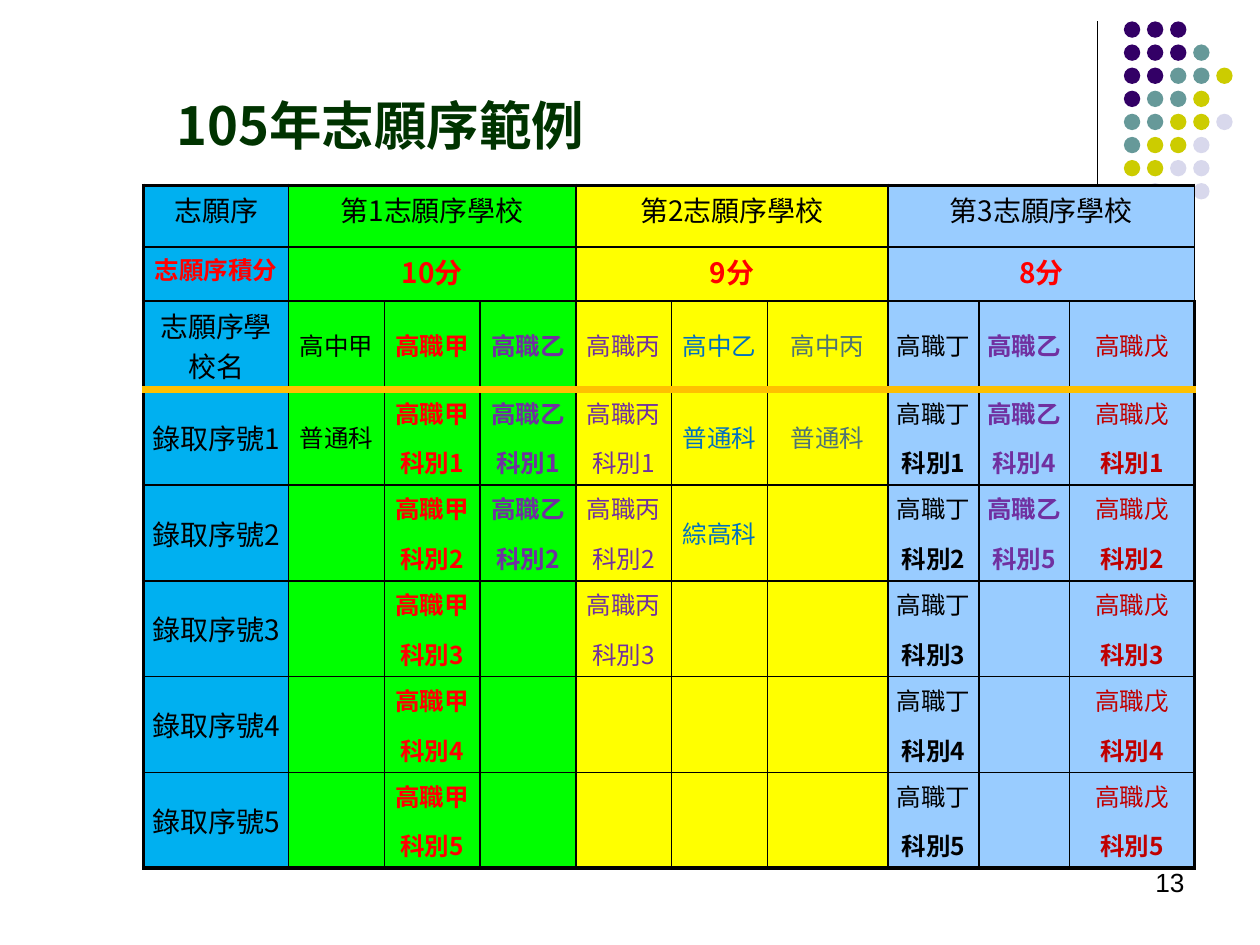
from dataclasses import dataclass

from lxml.etree import SubElement
from pptx import Presentation
from pptx.dml.color import RGBColor
from pptx.enum.shapes import MSO_CONNECTOR, MSO_SHAPE
from pptx.enum.text import MSO_ANCHOR, PP_ALIGN
from pptx.oxml.ns import qn
from pptx.util import Inches, Pt


@dataclass(frozen=True)
class Theme:
    cjk: str = "Noto Sans CJK SC"
    latin: str = "Arial"
    black: str = "000000"
    title: str = "003300"
    label_fill: str = "00B0F0"
    divider: str = "FFC000"
    red: str = "FF0000"
    dark_red: str = "C00000"
    purple: str = "7030A0"
    blue: str = "0070C0"
    grey: str = "4D7373"
    title_size: float = 30
    large: float = 16
    small: float = 14
    page_size: float = 15
    thin: float = 1
    outer: float = 2.25
    thick: float = 4.5


THEME = Theme()
TITLE = "105年志願序範例"
PAGE = "13"
LABELS = ["志願序", "志願序積分", "志願序學校名"] + [f"錄取序號{n}" for n in range(1, 6)]


def numbered(first, last):
    return [f"科別{n}" for n in range(first, last + 1)]


# school: name, colour, name bold, departments bold, departments
CHOICES = [
    ("第1志願序學校", "10分", "00FF00", [
        ("高中甲", THEME.black, False, False, ["普通科"]),
        ("高職甲", THEME.red, True, True, numbered(1, 5)),
        ("高職乙", THEME.purple, True, True, numbered(1, 2)),
    ]),
    ("第2志願序學校", "9分", "FFFF00", [
        ("高職丙", THEME.purple, False, False, numbered(1, 3)),
        ("高中乙", THEME.blue, False, False, ["普通科", "綜高科"]),
        ("高中丙", THEME.grey, False, False, ["普通科"]),
    ]),
    ("第3志願序學校", "8分", "99CCFF", [
        ("高職丁", THEME.black, False, True, numbered(1, 5)),
        ("高職乙", THEME.purple, True, True, numbered(4, 5)),
        ("高職戊", THEME.dark_red, False, True, numbered(1, 5)),
    ]),
]
COLUMNS = [1.15] + [0.76] * 5 + [0.96, 0.72, 0.72, 0.99]
ROWS = [0.49, 0.43, 0.67] + [0.76] * 5
NAME_ROW = 2

DOTS = ["PPP", "PPPT", "PPTTY", "PTTY", "TTYYL", "TYYL", "YYLL", " L L"]
DOT_COLOURS = {"P": "330066", "T": "669999", "Y": "CCCC00", "L": "D8D8EC"}
DOT_LEFT, DOT_TOP, DOT_SIZE, DOT_PITCH = 8.92, 0.17, 0.13, 1.1 / 6


def rgb(colour):
    return RGBColor.from_string(colour)


def style(paragraph, size, colour, bold=False, face=THEME.cjk, align=PP_ALIGN.CENTER):
    paragraph.alignment = align
    font = paragraph.font
    font.size, font.bold, font.name = Pt(size), bold, face
    font.color.rgb = rgb(colour)
    properties = paragraph._p.find(".//" + qn("a:defRPr"))
    SubElement(properties, qn("a:ea")).set("typeface", face)


def draw_borders(cell, row, column):
    last_row, last_column = len(ROWS) - 1, len(COLUMNS) - 1
    edges = {
        "L": column == 0,
        "R": column == last_column,
        "T": row == 0,
        "B": row == last_row,
    }
    for side, outside in edges.items():
        colour, width = THEME.black, THEME.outer if outside else THEME.thin
        if (row, side) in ((NAME_ROW, "B"), (NAME_ROW + 1, "T")):
            colour, width = THEME.divider, THEME.thick
        border = SubElement(cell._tc.get_or_add_tcPr(), qn(f"a:ln{side}"), w=str(Pt(width)))
        SubElement(SubElement(border, qn("a:solidFill")), qn("a:srgbClr"), val=colour)


def write(cell, lines, anchor=MSO_ANCHOR.MIDDLE):
    cell.vertical_anchor = anchor
    for index, (words, size, colour, bold) in enumerate(lines):
        paragraph = cell.text_frame.add_paragraph() if index else cell.text_frame.paragraphs[0]
        paragraph.text = words
        if index:
            paragraph.space_before = Pt(8)
        style(paragraph, size, colour, bold)


def add_decoration(slide):
    rule = slide.shapes.add_connector(
        MSO_CONNECTOR.STRAIGHT, Inches(8.71), Inches(0.17), Inches(8.71), Inches(1.83))
    rule.line.color.rgb, rule.line.width = rgb(THEME.black), Pt(0.75)
    SubElement(rule._element.spPr, qn("a:effectLst"))
    cluster = slide.shapes.add_group_shape()
    for row, keys in enumerate(DOTS):
        for column, key in enumerate(keys):
            if key not in DOT_COLOURS:
                continue
            dot = cluster.shapes.add_shape(
                MSO_SHAPE.OVAL, Inches(DOT_LEFT + column * DOT_PITCH),
                Inches(DOT_TOP + row * DOT_PITCH), Inches(DOT_SIZE), Inches(DOT_SIZE))
            dot.shadow.inherit = False
            dot.fill.solid()
            dot.fill.fore_color.rgb = rgb(DOT_COLOURS[key])
            dot.line.fill.background()


def add_title(slide):
    title = slide.shapes.title
    title.left, title.top, title.width, title.height = map(Inches, (1.3, 0.5, 5.48, 0.79))
    title.text_frame.text = TITLE
    title.text_frame.vertical_anchor = MSO_ANCHOR.BOTTOM
    style(title.text_frame.paragraphs[0], THEME.title_size, THEME.title, True, align=PP_ALIGN.LEFT)


def add_choices(slide):
    table = slide.shapes.add_table(
        len(ROWS), len(COLUMNS), Inches(1.14), Inches(1.47),
        Inches(sum(COLUMNS)), Inches(sum(ROWS))).table
    table.first_row = table.horz_banding = False
    for column, width in zip(table.columns, COLUMNS):
        column.width = Inches(width)
    for row, height in zip(table.rows, ROWS):
        row.height = Inches(height)

    fills = [THEME.label_fill] + [fill for _, _, fill, schools in CHOICES for _ in schools]
    for row in range(len(ROWS)):
        for column, fill in enumerate(fills):
            cell = table.cell(row, column)
            cell.margin_left = cell.margin_right = Inches(0.06)
            cell.margin_top = cell.margin_bottom = Inches(0.03)
            draw_borders(cell, row, column)
            cell.fill.solid()
            cell.fill.fore_color.rgb = rgb(fill)

    for row, label in enumerate(LABELS):
        score = row == 1
        write(table.cell(row, 0),
              [(label, THEME.small if score else THEME.large,
                THEME.red if score else THEME.black, score)],
              MSO_ANCHOR.TOP if row < NAME_ROW else MSO_ANCHOR.MIDDLE)

    start = 1
    for choice, score, _, schools in CHOICES:
        for row, line in enumerate([(choice, THEME.large, THEME.black, False),
                                    (score, THEME.large, THEME.red, True)]):
            table.cell(row, start).merge(table.cell(row, start + len(schools) - 1))
            write(table.cell(row, start), [line], MSO_ANCHOR.TOP)
        for column, (name, colour, bold, department_bold, departments) in enumerate(schools, start):
            heading = (name, THEME.small, colour, bold)
            write(table.cell(NAME_ROW, column), [heading])
            for row, department in enumerate(departments, NAME_ROW + 1):
                line = (department, THEME.small, colour, department_bold)
                vocational = name.startswith("高職")
                write(table.cell(row, column), [heading, line] if vocational else [line])
        start += len(schools)


def add_page_number(slide):
    page = slide.shapes.add_textbox(*map(Inches, (7.17, 6.83, 2.33, 0.5))).text_frame
    page.word_wrap = True
    page.text = PAGE
    style(page.paragraphs[0], THEME.page_size, THEME.black, face=THEME.latin, align=PP_ALIGN.RIGHT)


def main():
    presentation = Presentation()
    presentation.slide_width, presentation.slide_height = Inches(10), Inches(7.5)
    slide = presentation.slides.add_slide(presentation.slide_layouts[5])
    add_decoration(slide)
    add_title(slide)
    add_choices(slide)
    add_page_number(slide)
    presentation.save("out.pptx")


if __name__ == "__main__":
    main()
